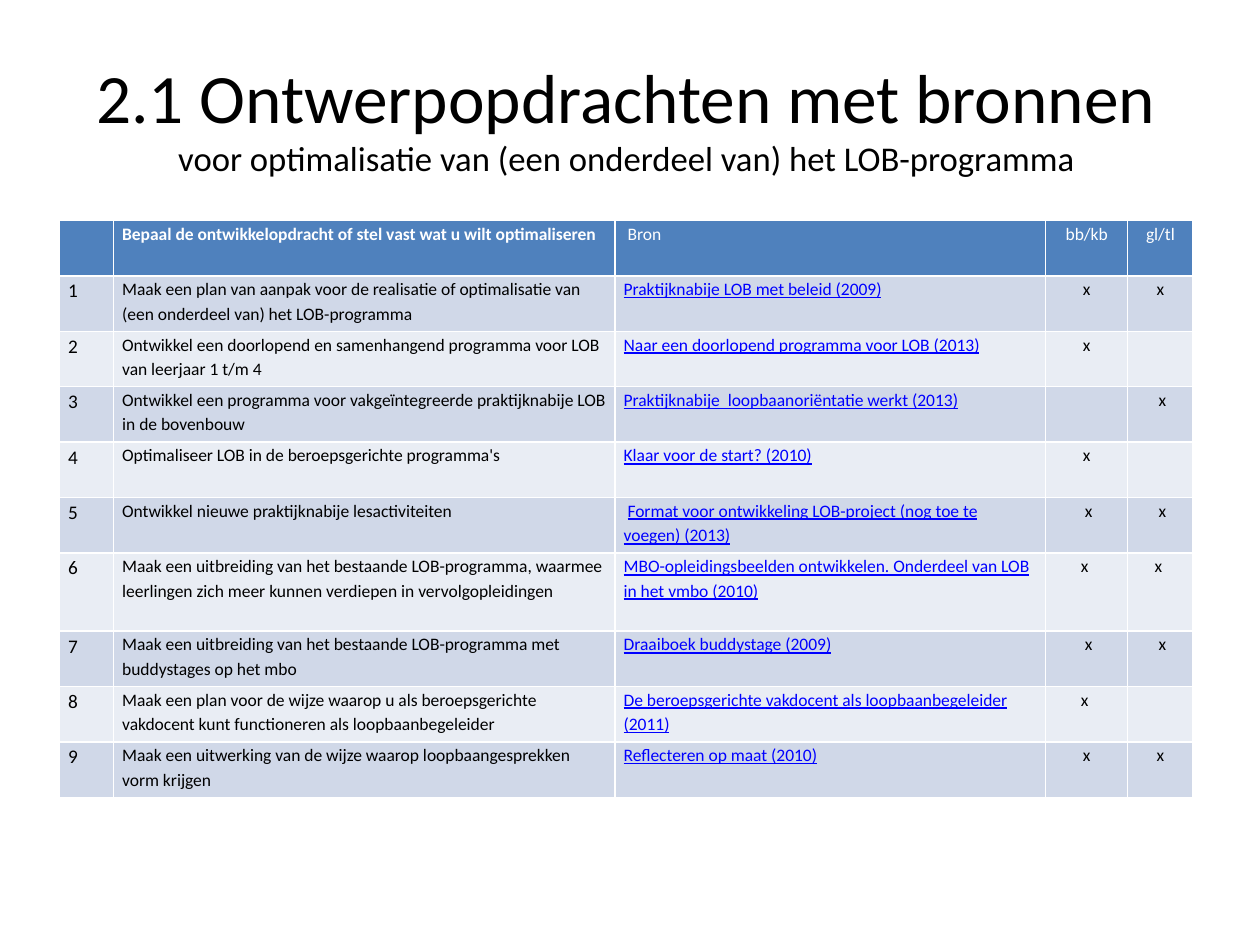
from pptx import Presentation
from pptx import util as u
from pptx.dml.color import RGBColor
from pptx.enum import text as t

# Content
TITLE = "2.1 Ontwerpopdrachten met bronnen"
SUB = "voor optimalisatie van (een onderdeel van) het LOB-programma"
HEAD = ("", "Bepaal de ontwikkelopdracht of stel vast wat u wilt optimaliseren",
        " Bron", "bb/kb", "gl/tl")
TASKS = [  # task, source, bb/kb, gl/tl
    ("Maak een plan van aanpak voor de realisatie of optimalisatie van (een onderdeel van) het LOB-programma",
     "Praktijknabije LOB met beleid (2009)", "x", "x"),
    ("Ontwikkel een doorlopend en samenhangend programma voor LOB van leerjaar 1 t/m 4",
     "Naar een doorlopend programma voor LOB (2013)", "x", ""),
    ("Ontwikkel een programma voor vakgeïntegreerde praktijknabije LOB in de bovenbouw",
     "Praktijknabije  loopbaanoriëntatie werkt (2013)", "", " x"),
    ("Optimaliseer LOB in de beroepsgerichte programma's",
     "Klaar voor de start? (2010)", "x", ""),
    ("Ontwikkel nieuwe praktijknabije lesactiviteiten",
     " Format voor ontwikkeling LOB-project (nog toe te voegen) (2013)", " x", " x"),
    ("Maak een uitbreiding van het bestaande LOB-programma, waarmee leerlingen zich meer kunnen verdiepen in vervolgopleidingen",
     "MBO-opleidingsbeelden ontwikkelen. Onderdeel van LOB in het vmbo (2010)", "x ", "x "),
    ("Maak een uitbreiding van het bestaande LOB-programma met buddystages op het mbo",
     "Draaiboek buddystage (2009)", " x", " x"),
    ("Maak een plan voor de wijze waarop u als beroepsgerichte vakdocent kunt functioneren als loopbaanbegeleider",
     "De beroepsgerichte vakdocent als loopbaanbegeleider (2011)", "x ", ""),
    ("Maak een uitwerking van de wijze waarop loopbaangesprekken vorm krijgen",
     "Reflecteren op maat (2010)", "x", "x"),
]

THEME = dict(font="Calibri", ink="000000", white="FFFFFF", link="0000FF",
             head="4F81BD", bands=("D0D8E8", "E9EDF4"),
             title=39.6, sub=19.8, num=11, body=10)
LEFT, WIDTH = 0.47, 9
COLS = (0.43, 3.98, 3.42, 0.65, 0.52)
ROW, TALL, TALLROW = 0.44, 0.62, 6


def put(frame, text, size=THEME["body"], color=THEME["ink"], bold=False,
        line=False, center=False, lead=None, after=None):
    """Append a formatted run to the frame's paragraph."""
    para = frame.paragraphs[0]
    if center:
        para.alignment = t.PP_ALIGN.CENTER
    if lead:
        para.line_spacing = lead
    if after:
        para.space_after = u.Pt(after)
    run = para.add_run()
    run.text = text
    font = run.font
    font.name, font.size = THEME["font"], u.Pt(size)
    font.bold, font.underline = bold, line
    font.color.rgb = RGBColor.from_string(color)
    return para


deck = Presentation()
deck.slide_width, deck.slide_height = u.Inches(10), u.Inches(7.5)
slide = deck.slides.add_slide(deck.slide_layouts[6])

# Title
box = slide.shapes.add_textbox(u.Inches(LEFT), u.Inches(0.3),
                               u.Inches(WIDTH), u.Inches(1.25)).text_frame
box.word_wrap = True
box.vertical_anchor = t.MSO_ANCHOR.MIDDLE
put(box, TITLE, THEME["title"], center=True).add_line_break()
put(box, SUB, THEME["sub"])

# Table: its default style draws the white grid
rows = [HEAD] + [(str(n), *task) for n, task in enumerate(TASKS, 1)]
high = [TALL if r == TALLROW else ROW for r in range(len(rows))]
grid = slide.shapes.add_table(len(rows), len(COLS), u.Inches(LEFT), u.Inches(1.75),
                              u.Inches(WIDTH), u.Inches(sum(high))).table
for col, wide in zip(grid.columns, COLS):
    col.width = u.Inches(wide)
for row, tall in zip(grid.rows, high):
    row.height = u.Inches(tall)

# Cells
for r, row in enumerate(rows):
    fill = THEME["bands"][(r - 1) % 2] if r else THEME["head"]
    for c, word in enumerate(row):
        cell = grid.cell(r, c)
        cell.fill.solid()
        cell.fill.fore_color.rgb = RGBColor.from_string(fill)
        cell.margin_left = cell.margin_right = u.Inches(0.07)
        cell.margin_top = cell.margin_bottom = 0
        if not word:
            continue
        link = r > 0 and c == 2
        form = dict(center=c > 2, lead=1.15, after=10)
        if link and word[0].isspace():  # leading gap stays plain
            put(cell.text_frame, word[0], **form)
            word = word[1:]
        color = THEME["white"] if r == 0 else THEME["link" if link else "ink"]
        put(cell.text_frame, word, THEME["body" if c else "num"], color,
            bold=r == 0 and c == 1, line=link, **form)

deck.save("out.pptx")
